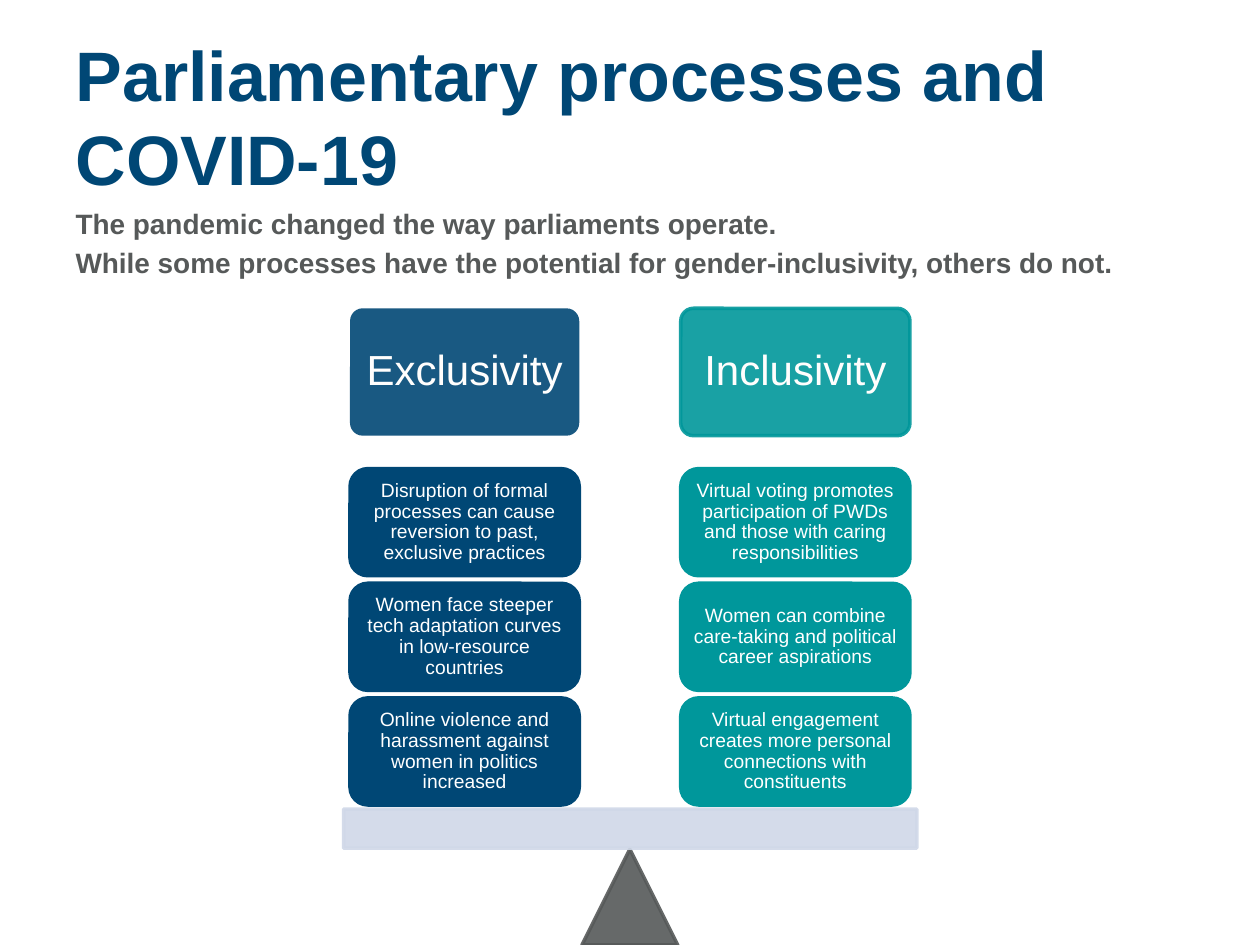
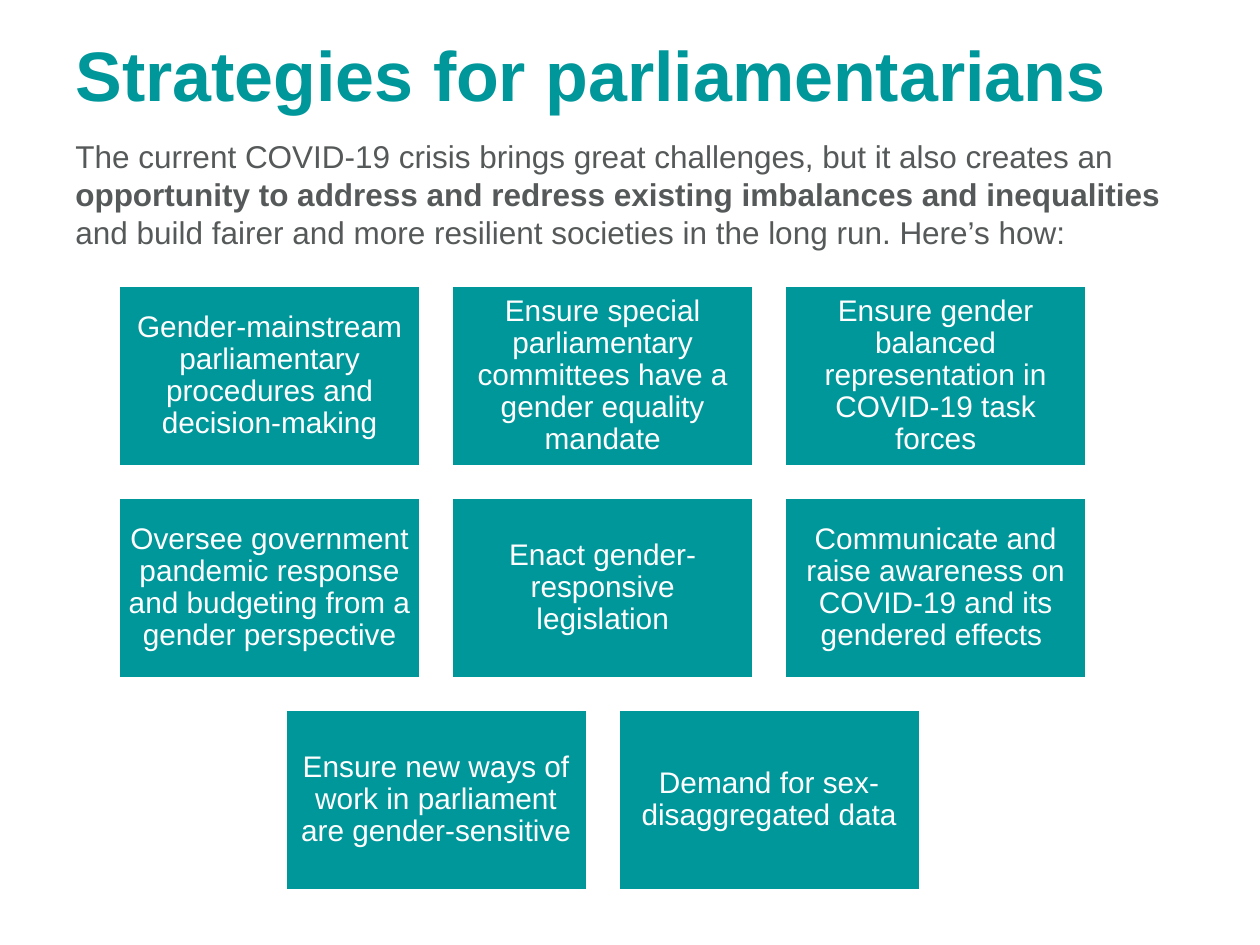
from pptx import Presentation
from pptx.dml.color import RGBColor
from pptx.enum.shapes import MSO_SHAPE as SHAPE
from pptx.enum.text import MSO_ANCHOR as ANCHOR, MSO_AUTO_SIZE as AUTO, PP_ALIGN as ALIGN
from pptx.oxml.ns import qn
from pptx.util import Pt
from lxml import etree

NAVY = RGBColor(0x00, 0x47, 0x75)
TEAL = RGBColor(0x00, 0x97, 0x9B)
GREY = RGBColor(0x56, 0x59, 0x59)
PALE = RGBColor(0xD0, 0xD8, 0xE8)
WHITE = RGBColor(0xFF, 0xFF, 0xFF)
OFF_WHITE = RGBColor(0xFF, 0xFE, 0xFD)

TITLE_AND_BODY, TITLE_ONLY = 1, 5
MARGIN, TEXT_WIDTH = 36, 648


class Deck:
    font = "Arial"

    def __init__(self, prs):
        self.prs = prs
        self.s = None

    def add_slide(self, layout, title, color, height):
        self.s = self.prs.slides.add_slide(self.prs.slide_layouts[layout])
        sp = self.s.shapes.title
        self.place(sp, MARGIN, 14.4, TEXT_WIDTH, height)
        sp.text_frame.text = title
        self.format_text(sp.text_frame, 40, color, bold=True)

    def place(self, sp, left, top, width, height):
        sp.left, sp.top, sp.width, sp.height = map(Pt, (left, top, width, height))

    def style_run(self, r, size, color, bold):
        r.font.name = self.font
        r.font.size = Pt(size)
        r.font.bold = bold
        r.font.color.rgb = color

    def format_text(self, tf, size, color, bold=False, align=ALIGN.LEFT, anchor=ANCHOR.TOP):
        tf.word_wrap = True
        tf.auto_size = AUTO.NONE
        tf.vertical_anchor = anchor
        for p in tf.paragraphs:
            p.alignment = align
            for r in p.runs:
                self.style_run(r, size, color, bold)

    def body(self, lines, top, height, size):
        """Fill the body placeholder with unbulleted bold lines."""
        sp = self.s.placeholders[1]
        self.place(sp, MARGIN, top, TEXT_WIDTH, height)
        tf = sp.text_frame
        tf.text = "\n".join(lines)
        for i, p in enumerate(tf.paragraphs):
            pPr = p._p.get_or_add_pPr()
            pPr.set("marL", "0")
            pPr.set("indent", "0")
            etree.SubElement(pPr, qn("a:buNone"))
            p.space_before = Pt(0.2 * size if i else 0)
        self.format_text(tf, size, GREY, bold=True)

    def rich_text(self, parts, top, height, size):
        """Add one paragraph made of (text, bold) parts."""
        sp = self.s.shapes.add_textbox(Pt(MARGIN), Pt(top), Pt(TEXT_WIDTH), Pt(height))
        sp.text_frame.word_wrap = True
        p = sp.text_frame.paragraphs[0]
        for text, bold in parts:
            r = p.add_run()
            r.text = text
            self.style_run(r, size, GREY, bold)

    def shape(self, kind, left, top, width, height, fill, line=None, alpha=100):
        sp = self.s.shapes.add_shape(kind, Pt(left), Pt(top), Pt(width), Pt(height))
        sp.shadow.inherit = False
        sp.fill.solid()
        sp.fill.fore_color.rgb = fill
        if line is None:
            sp.line.fill.background()
        else:
            sp.line.color.rgb = line
            sp.line.width = Pt(2)
        if alpha < 100:
            for clr in sp._element.spPr.iter(qn("a:srgbClr")):
                etree.SubElement(clr, qn("a:alpha")).set("val", str(alpha * 1000))
        return sp

    def label(self, sp, text, size, inset, color=WHITE):
        tf = sp.text_frame
        tf.margin_left = tf.margin_right = tf.margin_top = tf.margin_bottom = Pt(inset)
        tf.text = text
        self.format_text(tf, size, color, align=ALIGN.CENTER, anchor=ANCHOR.MIDDLE)
        tf.paragraphs[0].line_spacing = 0.9


def build_balance(deck):
    deck.add_slide(TITLE_AND_BODY, "Parliamentary processes and COVID-19", NAVY, 104.4)
    deck.body(["The pandemic changed the way parliaments operate.",
               "While some processes have the potential for gender-inclusivity, others do not."],
              114.5, 28.8, 16)

    deck.shape(SHAPE.ISOSCELES_TRIANGLE, 332.6, 485.3, 54.7, 54.7, GREY, GREY, 90)
    deck.shape(SHAPE.RECTANGLE, 196.3, 462.4, 327.6, 22.3, PALE, PALE, 90)

    pans = [
        (200, NAVY, None, "Exclusivity",
         ["Disruption of formal processes can cause reversion to past, exclusive practices",
          "Women face steeper tech adaptation curves in low-resource countries",
          "Online violence and harassment against women in politics increased"]),
        (389, TEAL, TEAL, "Inclusivity",
         ["Virtual voting promotes participation of PWDs and those with caring responsibilities",
          "Women can combine care-taking and political career aspirations",
          "Virtual engagement creates more personal connections with constituents"]),
    ]
    width, weight_top, weight_height, weight_step = 131, 267.8, 61.2, 65.5
    for left, color, header_line, header, weights in pans:
        sp = deck.shape(SHAPE.ROUNDED_RECTANGLE, left, 176.2, width, 72.8,
                        color, header_line, 90)
        sp.adjustments[0] = 0.1
        deck.label(sp, header, 24, 7.2, OFF_WHITE)
        for i, text in enumerate(weights):
            sp = deck.shape(SHAPE.ROUNDED_RECTANGLE, left, weight_top + i * weight_step,
                            width, weight_height, color, color)
            deck.label(sp, text, 11, 3.6)


def build_strategies(deck):
    deck.add_slide(TITLE_ONLY, "Strategies for parliamentarians", TEAL, 89.3)

    rows = [
        ["Gender-mainstream parliamentary procedures and decision-making",
         "Ensure special parliamentary committees have a gender equality mandate",
         "Ensure gender balanced representation in COVID-19 task forces"],
        ["Oversee government pandemic response and budgeting from a gender perspective",
         "Enact gender-responsive legislation",
         "Communicate and raise awareness on COVID-19 and its gendered effects "],
        ["Ensure new ways of work in parliament are gender-sensitive",
         "Demand for sex-disaggregated data"],
    ]
    width, height, gap = 172.8, 103.7, 17.5
    center, top = 344.4, 162.9
    for row, texts in enumerate(rows):
        row_width = len(texts) * (width + gap) - gap
        for col, text in enumerate(texts):
            sp = deck.shape(SHAPE.RECTANGLE, center - row_width / 2 + col * (width + gap),
                            top + row * (height + gap), width, height, TEAL, WHITE)
            deck.label(sp, text, 17, 5)

    deck.rich_text([
        ("The current COVID-19 crisis brings great challenges, but it also creates an ", False),
        ("opportunity to address and redress existing imbalances and inequalities ", True),
        ("and build fairer and more resilient societies in the long run. Here’s how:", False),
    ], 74.9, 72.7, 18)


def main():
    prs = Presentation()
    prs.slide_width, prs.slide_height = Pt(720), Pt(540)
    deck = Deck(prs)
    build_balance(deck)
    build_strategies(deck)
    prs.save("out.pptx")


if __name__ == "__main__":
    main()
